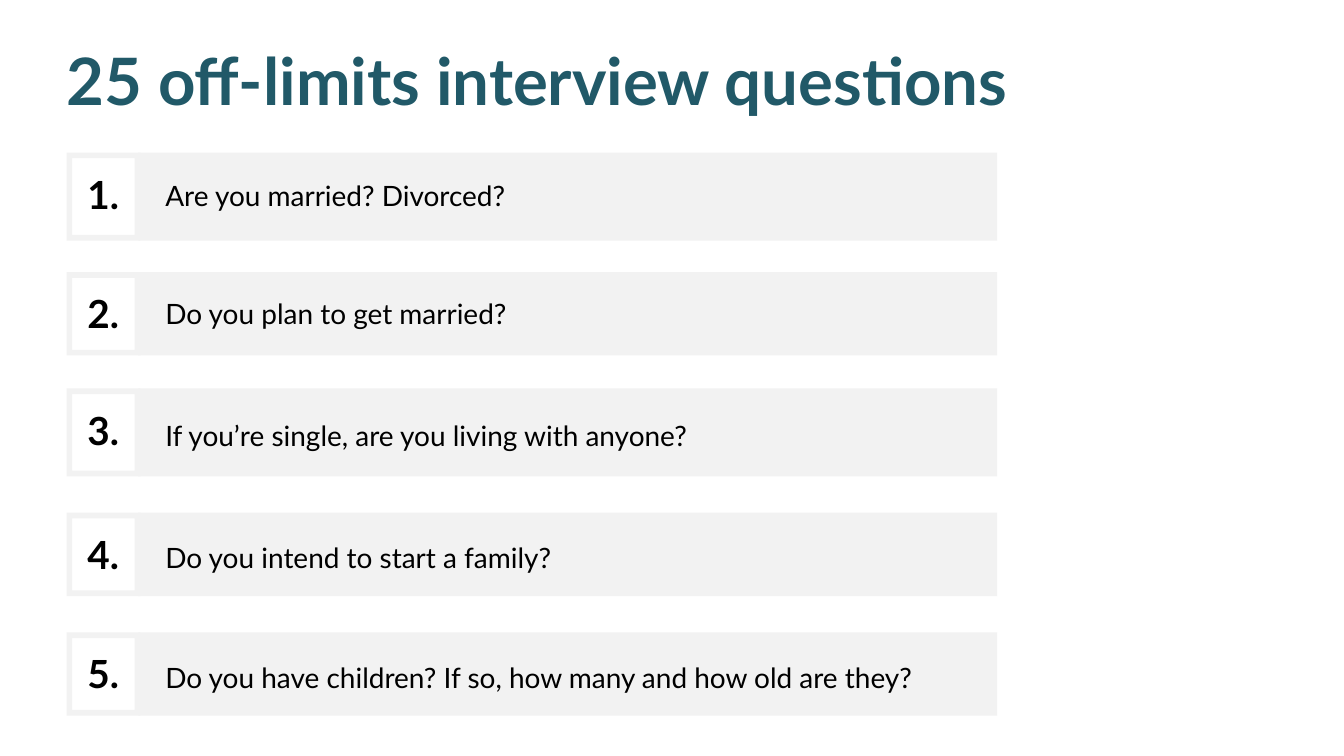
from pptx import Presentation
from pptx import util as u
from pptx.dml.color import RGBColor
from pptx.enum import shapes, text

TEAL = RGBColor(0x21, 0x59, 0x68)
BLACK = RGBColor(0, 0, 0)
GREY = RGBColor(0xF2, 0xF2, 0xF2)

COLUMNS, ROWS = 200, 112.5
MARGIN = 9.9
BAR_LEFT, BAR_WIDTH = 20.6, 127.8
FRAME_WIDTH, FRAME_EDGE = 11, 0.85

# Row top, row height, top of the question's text, question
QUESTIONS = [
    (22.7, 13.1, 25.7, "Are you married? Divorced?"),
    (40.5, 12.4, 43.3, "Do you plan to get married?"),
    (57.8, 13.1, 61.4, "If you’re single, are you living with anyone?"),
    (76.3, 12.4, 79.6, "Do you intend to start a family?"),
    (94.1, 12.4, 97.5, "Do you have children? If so, how many and how old are they?"),
]


class QuestionPage:
    """Style and current slide; lengths are columns and rows of the grid."""

    font = "Lato"

    def __init__(self, deck):
        self.column = deck.slide_width / COLUMNS
        self.row = deck.slide_height / ROWS
        self.page = deck.slides.add_slide(deck.slide_layouts[5])

    def place(self, left, top, width, height):
        return (u.Emu(round(left * self.column)), u.Emu(round(top * self.row)),
                u.Emu(round(width * self.column)), u.Emu(round(height * self.row)))

    def set_words(self, box, words, size, leading, color=BLACK, bold=False):
        frame = box.text_frame
        frame.text = words
        frame.word_wrap = True
        frame.auto_size = text.MSO_AUTO_SIZE.NONE
        frame.vertical_anchor = text.MSO_ANCHOR.TOP
        frame.margin_left = frame.margin_right = 0
        frame.margin_top = frame.margin_bottom = 0
        para = frame.paragraphs[0]
        para.alignment = text.PP_ALIGN.LEFT
        para.line_spacing = u.Pt(leading)
        font = para.runs[0].font
        font.name, font.size, font.bold = self.font, u.Pt(size), bold
        font.color.rgb = color

    def title(self, words, *area):
        box = self.page.shapes.title
        box.left, box.top, box.width, box.height = self.place(*area)
        self.set_words(box, words, 70, 79.8, TEAL, True)

    def label(self, words, area, size, leading, bold=False):
        box = self.page.shapes.add_textbox(*self.place(*area))
        self.set_words(box, words, size, leading, bold=bold)

    def panel(self, kind, *area):
        panel = self.page.shapes.add_shape(kind, *self.place(*area))
        panel.shadow.inherit = False
        panel.fill.solid()
        panel.fill.fore_color.rgb = GREY
        panel.line.fill.background()
        return panel

    def question(self, number, top, height, text_top, words):
        self.panel(shapes.MSO_SHAPE.RECTANGLE, BAR_LEFT, top, BAR_WIDTH, height)
        frame = self.panel(shapes.MSO_SHAPE.FRAME, MARGIN, top, FRAME_WIDTH, height)
        frame.adjustments[0] = FRAME_EDGE / FRAME_WIDTH
        self.label(words, (24.6, text_top, 121.1, 5.5), 30, 42)
        self.label(f"{number}.", (13, top + 3, 6.1, 6.7), 41.5, 47.4, bold=True)


def main():
    deck = Presentation()
    deck.slide_width, deck.slide_height = u.Inches(20), u.Inches(11.25)
    page = QuestionPage(deck)
    page.title("25 off-limits interview questions", MARGIN, 6.5, 165.6, 11.2)
    for number, row in enumerate(QUESTIONS, 1):
        page.question(number, *row)
    deck.save("out.pptx")


if __name__ == "__main__":
    main()
